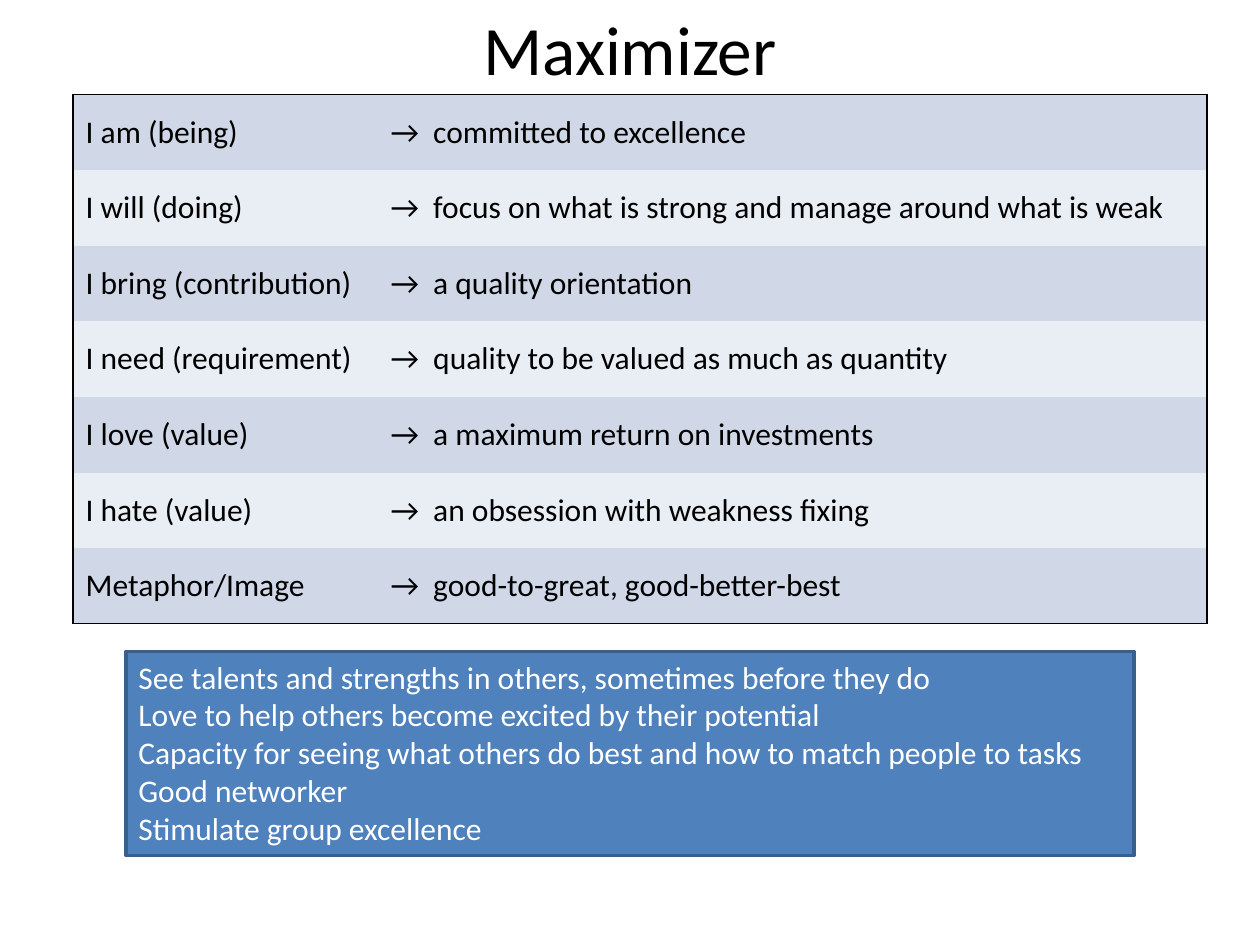
from lxml.etree import SubElement
from pptx import Presentation
from pptx.dml.color import RGBColor
from pptx.enum.shapes import MSO_SHAPE
from pptx.enum.text import MSO_ANCHOR, MSO_AUTO_SIZE, PP_ALIGN
from pptx.oxml.ns import qn
from pptx.util import Inches, Pt

COLORS = {
    "text": "000000",
    "light_text": "FFFFFF",
    "odd_row": "D0D8E8",
    "even_row": "E9EDF4",
    "border": "000000",
    "panel": "4F81BD",
    "panel_line": "3A5F8C",
}
FONT = "Calibri"
STATEMENTS = [
    ("I am (being)", "committed to excellence"),
    ("I will (doing)", "focus on what is strong and manage around what is weak"),
    ("I bring (contribution)", "a quality orientation"),
    ("I need (requirement)", "quality to be valued as much as quantity"),
    ("I love (value)", "a maximum return on investments"),
    ("I hate (value)", "an obsession with weakness fixing"),
    ("Metaphor/Image", "good-to-great, good-better-best"),
]
TRAITS = [
    "See talents and strengths in others, sometimes before they do",
    "Love to help others become excited by their potential",
    "Capacity for seeing what others do best and how to match people to tasks",
    "Good networker",
    "Stimulate group excellence",
]


def color(name):
    return RGBColor.from_string(COLORS[name])


def write_lines(text_frame, lines, size, color_name, alignment=PP_ALIGN.LEFT):
    text_frame.text = "\n".join(lines)
    for paragraph in text_frame.paragraphs:
        paragraph.alignment = alignment
        paragraph.font.name = FONT
        paragraph.font.size = Pt(size)
        paragraph.font.color.rgb = color(color_name)


def set_borders(cell, visible_edges):
    properties = cell._tc.get_or_add_tcPr()
    for edge in "LRTB":
        line = SubElement(properties, qn(f"a:ln{edge}"), w=str(Pt(1)))
        if edge in visible_edges:
            fill = SubElement(line, qn("a:solidFill"))
            SubElement(fill, qn("a:srgbClr"), val=COLORS["border"])
        else:
            SubElement(line, qn("a:noFill"))


def add_title(slide, left, top, width, height):
    title = slide.shapes.add_textbox(left, top, width, height)
    text_frame = title.text_frame
    text_frame.word_wrap = True
    text_frame.auto_size = MSO_AUTO_SIZE.NONE
    text_frame.vertical_anchor = MSO_ANCHOR.MIDDLE
    write_lines(text_frame, ["Maximizer"], 39.6, "text", PP_ALIGN.CENTER)


def add_statement_table(slide, left, top, width, height):
    last_row = len(STATEMENTS) - 1
    table = slide.shapes.add_table(len(STATEMENTS), 2, left, top, width, height).table
    table.first_row = False
    table.horz_banding = False
    label_width = Inches(2.42)
    table.columns[0].width = label_width
    table.columns[1].width = width - label_width
    for row, (label, statement) in enumerate(STATEMENTS):
        table.rows[row].height = height // len(STATEMENTS)
        for column, text in enumerate((label, f"→  {statement}")):
            cell = table.cell(row, column)
            cell.vertical_anchor = MSO_ANCHOR.MIDDLE
            write_lines(cell.text_frame, [text], 18, "text")
            edges = "LR"[column]
            if row == 0:
                edges += "T"
            if row == last_row:
                edges += "B"
            set_borders(cell, edges)
            cell.fill.solid()
            cell.fill.fore_color.rgb = color("even_row" if row % 2 else "odd_row")


def add_traits_panel(slide, left, top, width, height):
    panel = slide.shapes.add_shape(MSO_SHAPE.RECTANGLE, left, top, width, height)
    panel.shadow.inherit = False
    panel.fill.solid()
    panel.fill.fore_color.rgb = color("panel")
    panel.line.color.rgb = color("panel_line")
    panel.line.width = Pt(2)
    text_frame = panel.text_frame
    text_frame.word_wrap = True
    text_frame.auto_size = MSO_AUTO_SIZE.SHAPE_TO_FIT_TEXT
    text_frame.vertical_anchor = MSO_ANCHOR.TOP
    write_lines(text_frame, TRAITS, 18, "light_text")


def main():
    presentation = Presentation()
    presentation.slide_width = Inches(10)
    presentation.slide_height = Inches(7.5)
    slide = presentation.slides.add_slide(presentation.slide_layouts[6])
    add_title(slide, Inches(0.5), Inches(0.17), Inches(9), Inches(0.42))
    add_statement_table(slide, Inches(0.58), Inches(0.75), Inches(9), Inches(4.2))
    add_traits_panel(slide, Inches(1), Inches(5.17), Inches(8), Inches(1.62))
    presentation.save("out.pptx")


if __name__ == "__main__":
    main()
